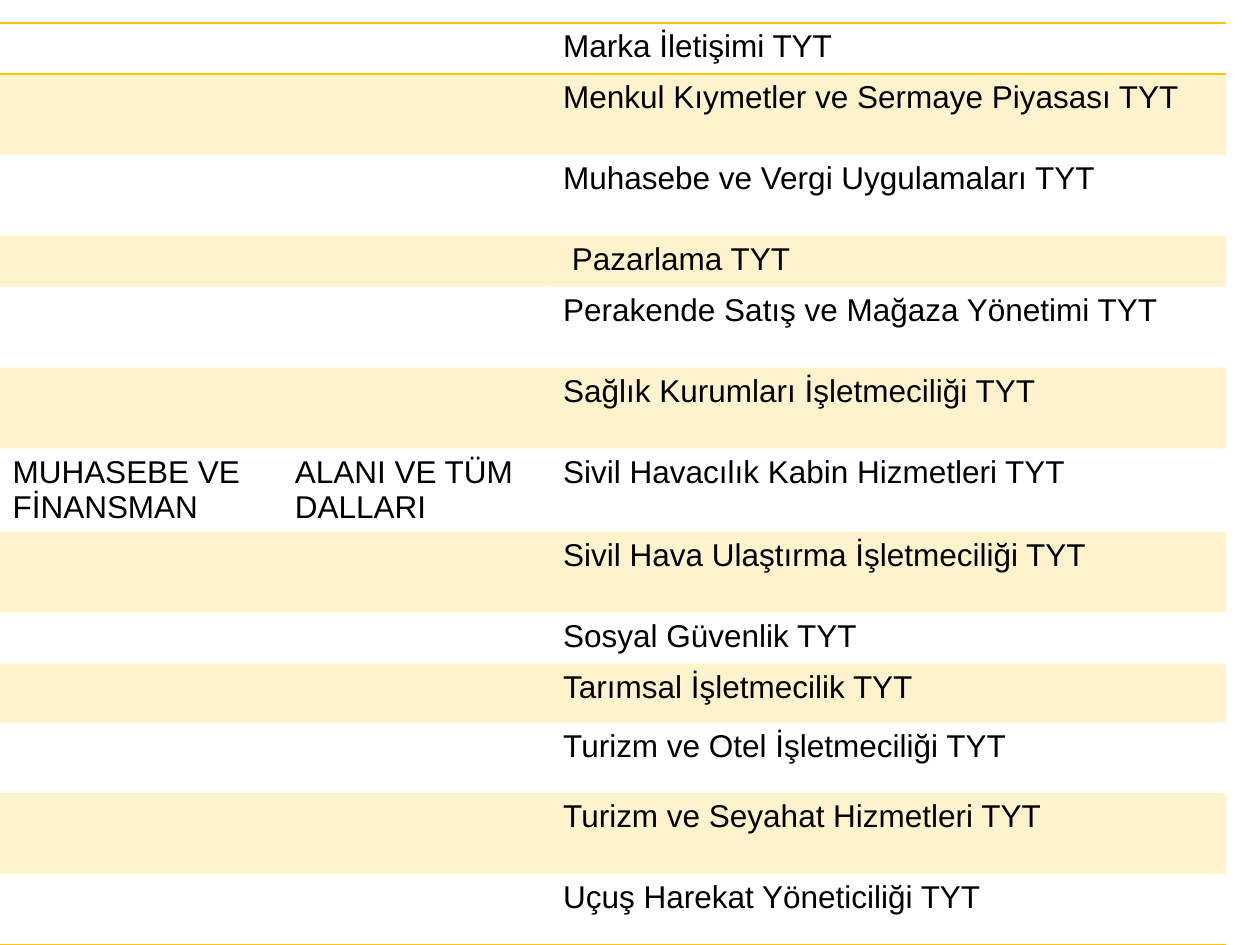
import pptx
import pptx.util
import pptx.dml.color
import pptx.oxml
import pptx.oxml.ns
from pptx.util import Cm

GOLD = "FFC30B"
BLACK = "000000"
FIELD_ROW = 6
FIELD = ("MUHASEBE VE FİNANSMAN", "ALANI VE TÜM DALLARI")
COL_WIDTHS = (5.69, 5.41, 13.61)
SHORT, TALL = 0.91, 1.63

# Programme name and row height in cm
PROGRAMMES = [
    ("Marka İletişimi TYT", SHORT),
    ("Menkul Kıymetler ve Sermaye Piyasası TYT", TALL),
    ("Muhasebe ve Vergi Uygulamaları TYT", TALL),
    (" Pazarlama TYT", SHORT),
    ("Perakende Satış ve Mağaza Yönetimi TYT", TALL),
    ("Sağlık Kurumları İşletmeciliği TYT", TALL),
    ("Sivil Havacılık Kabin Hizmetleri TYT", TALL),
    ("Sivil Hava Ulaştırma İşletmeciliği TYT", TALL),
    ("Sosyal Güvenlik TYT", SHORT),
    ("Tarımsal İşletmecilik TYT", 1.19),
    ("Turizm ve Otel İşletmeciliği TYT", 1.42),
    ("Turizm ve Seyahat Hizmetleri TYT", TALL),
    ("Uçuş Harekat Yöneticiliği TYT", 1.42),
]


def rgb(value):
    return pptx.dml.color.RGBColor.from_string(value)


def set_borders(cell, ruled):
    """Rule the named sides in gold and clear the others."""
    tc_pr = cell._tc.get_or_add_tcPr()
    for i, side in enumerate("LRTB"):
        paint = (f'<a:solidFill><a:srgbClr val="{GOLD}"/></a:solidFill>'
                 if side in ruled else "<a:noFill/>")
        ln = pptx.oxml.parse_xml(
            f'<a:ln{side} {pptx.oxml.ns.nsdecls("a")} w="12700">{paint}</a:ln{side}>')
        tc_pr.insert(i, ln)


def set_band(cell, shaded):
    """Fill the cell with 20 % gold, or leave it clear."""
    if not shaded:
        cell.fill.background()
        return
    cell.fill.solid()
    cell.fill.fore_color.rgb = rgb(GOLD)
    color = cell._tc.tcPr.find(".//" + pptx.oxml.ns.qn("a:solidFill"))[0]
    color.append(pptx.oxml.parse_xml(
        f'<a:alpha {pptx.oxml.ns.nsdecls("a")} val="20000"/>'))


def set_text(cell, text):
    cell.text_frame.text = text
    font = cell.text_frame.paragraphs[0].runs[0].font
    font.name = "Arial"
    font.size = pptx.util.Pt(18)
    font.bold = False
    font.color.rgb = rgb(BLACK)


def add_programme_table(slide, left, top, width, height):
    last = len(PROGRAMMES) - 1
    table = slide.shapes.add_table(
        len(PROGRAMMES), len(COL_WIDTHS), left, top, width, height).table
    table.first_row = False
    table.horz_banding = False
    for col, col_width in zip(table.columns, COL_WIDTHS):
        col.width = Cm(col_width)

    for i, (name, row_height) in enumerate(PROGRAMMES):
        table.rows[i].height = Cm(row_height)
        texts = (*(FIELD if i == FIELD_ROW else ("", "")), name)
        # Rules lie around the first row and under the last
        ruled = {0: "TB", 1: "T", last: "B"}.get(i, "")
        for cell, text in zip(table.rows[i].cells, texts):
            set_band(cell, i % 2 == 1)
            set_borders(cell, ruled)
            if text:
                set_text(cell, text)


def main():
    prs = pptx.Presentation()
    prs.slide_width, prs.slide_height = Cm(25.4), Cm(19.05)
    slide = prs.slides.add_slide(prs.slide_layouts[6])
    add_programme_table(slide, Cm(0), Cm(0.46), Cm(24.71), Cm(18.59))
    prs.save("out.pptx")


if __name__ == "__main__":
    main()
